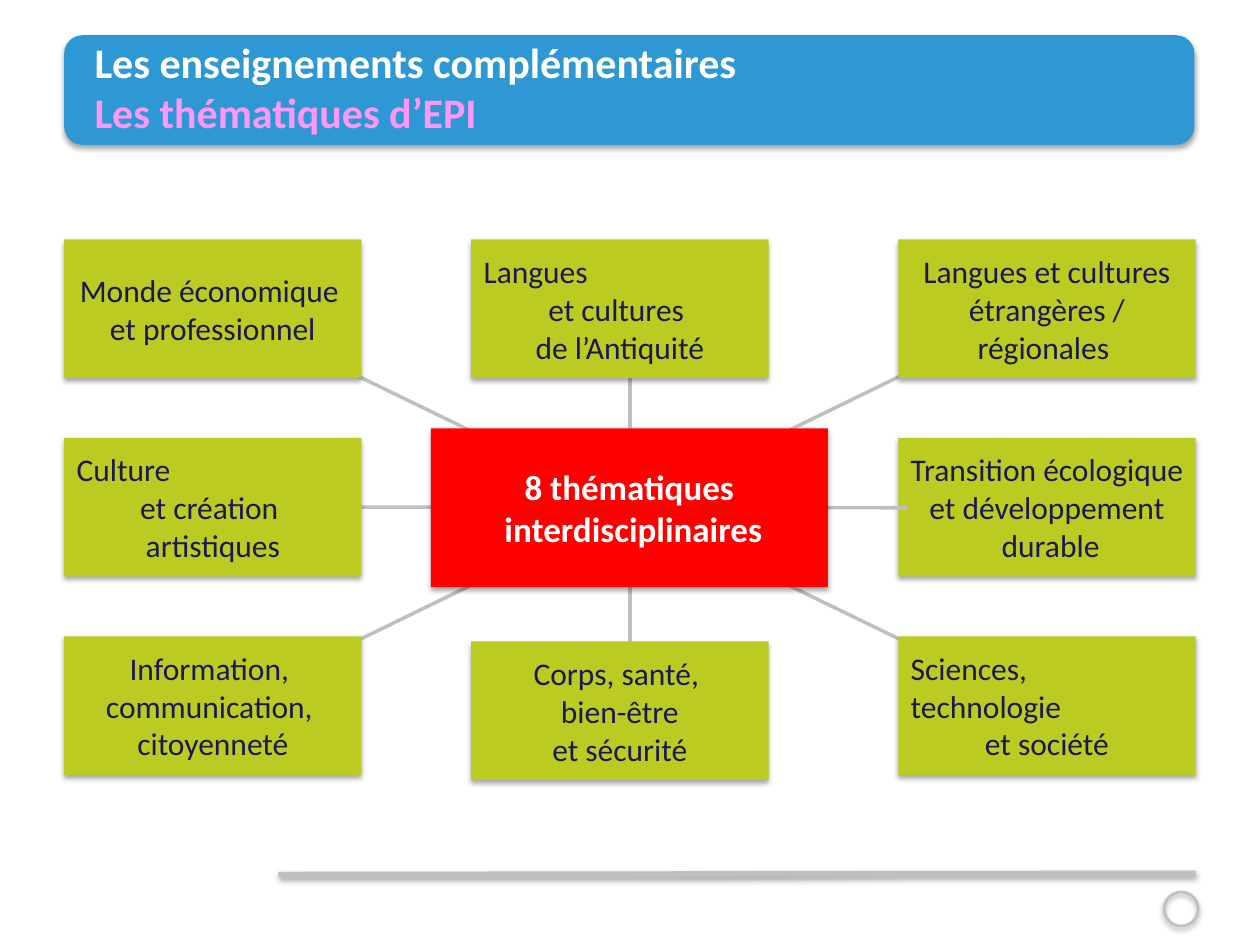
"""Builds the slide showing the eight EPI themes around a central box."""
from lxml.etree import SubElement
from pptx import Presentation
from pptx.dml.color import RGBColor
from pptx.enum.shapes import MSO_CONNECTOR as Connector, MSO_SHAPE as Shape
from pptx.enum.text import MSO_ANCHOR as Anchor, MSO_AUTO_SIZE as AutoSize, PP_ALIGN as Align
from pptx.oxml.ns import qn
from pptx.util import Inches, Pt

THEME = {
    "font": "Calibri",
    "banner": "2E98D5", "accent": "FF97F6", "white": "FFFFFF", "line": "BFBFBF",
    "box": "BCCB21", "ink": "1C1850", "hub": "FF0000",
    "title_size": 24, "hub_size": 20, "box_size": 18,
}
TITLE = ["Les enseignements complémentaires", "Les thématiques d’EPI"]
HUB = ["8 thématiques", " interdisciplinaires"]
MIDDLE_THEMES = [
    {"cell": (1, 2), "lines": ["Corps, santé, ", "bien-être", "et sécurité"], "drop": 0.04},
    {"cell": (1, 0), "lines": ["Langues", "et cultures ", "de l’Antiquité"], "first": Align.LEFT},
]
RIGHT_THEMES = [
    {"cell": (2, 2), "lines": ["Sciences, technologie", "et société"], "first": Align.LEFT},
    {"cell": (2, 1), "lines": ["Transition écologique et développement", " durable"], "inset": 0.04},
    {"cell": (2, 0), "lines": ["Langues et cultures", "étrangères / régionales "]},
]
LEFT_THEMES = [
    {"cell": (0, 2), "lines": ["Information, ", "communication, ", "citoyenneté"]},
    {"cell": (0, 1), "lines": ["Culture", "et création ", "artistiques"], "first": Align.LEFT},
    {"cell": (0, 0), "lines": ["Monde économique ", "et professionnel"]},
]
SPOKES = [
    ((2.79, 2.96), (7.36, 5.18)),
    ((7.36, 2.88), (2.64, 5.18)),
    ((5, 2.38), (5, 5.61)),
]
CROSSBAR = ((7.2, 4.03), (2.85, 4.03))
FOOTER_RULE = ((2.21, 6.94), (9.49, 6.93))
COLUMNS = (0.51, 3.74, 7.13)
TOP, PITCH = 1.9, 1.575
BOX_W, BOX_H = 2.36, 1.1


def color(name):
    return RGBColor.from_string(THEME[name])


def add_shadow(sp, alpha=35, distance=1.8):
    effects = SubElement(sp._element.spPr, qn("a:effectLst"))
    outer = SubElement(effects, qn("a:outerShdw"), blurRad=str(Pt(3.1)),
                       dist=str(Pt(distance)), dir="5400000", rotWithShape="0")
    black = SubElement(outer, qn("a:srgbClr"), val="000000")
    SubElement(black, qn("a:alpha"), val=str(alpha * 1000))


def write(sp, lines, size, colors, bold=False, align=Align.CENTER, first=None, inset=(0.1, 0.05)):
    tf = sp.text_frame
    tf.word_wrap = True
    tf.auto_size = AutoSize.NONE
    tf.vertical_anchor = Anchor.MIDDLE
    tf.margin_left = tf.margin_right = Inches(inset[0])
    tf.margin_top = tf.margin_bottom = Inches(inset[1])
    for i, line in enumerate(lines):
        p = tf.paragraphs[0] if i == 0 else tf.add_paragraph()
        p.alignment = first if i == 0 and first is not None else align
        p.space_before = Pt(0)
        r = p.add_run()
        r.text = line
        r.font.name = THEME["font"]
        r.font.size = Pt(THEME[size])
        r.font.bold = bold
        r.font.color.rgb = color(colors[i % len(colors)])


def add_block(s, kind, at, fill=None, line=None):
    sp = s.shapes.add_shape(kind, *map(Inches, at))
    if fill:
        sp.fill.solid()
        sp.fill.fore_color.rgb = color(fill)
    else:
        sp.fill.background()
    if line:
        sp.line.color.rgb = color(line)
        sp.line.width = Pt(1.5)
    else:
        sp.line.fill.background()
    add_shadow(sp)
    return sp


def add_line(s, ends, width=2, shadow=False):
    start, end = ends
    line = s.shapes.add_connector(Connector.STRAIGHT, *map(Inches, start + end))
    line.line.color.rgb = color("line")
    line.line.width = Pt(width)
    if shadow:
        add_shadow(line, alpha=38, distance=1.6)
    else:
        SubElement(line._element.spPr, qn("a:effectLst"))
    return line


def add_theme(s, cell, lines, first=None, inset=0.1, drop=0):
    column, row = cell
    at = (COLUMNS[column], TOP + row * PITCH + drop, BOX_W, BOX_H)
    sp = add_block(s, Shape.RECTANGLE, at, fill="box")
    write(sp, lines, "box_size", ["ink"], first=first, inset=(inset, 0.05))
    return sp


def add_header(s):
    add_block(s, Shape.ROUNDED_RECTANGLE, (0.51, 0.28, 8.97, 0.87), fill="banner")
    add_line(s, FOOTER_RULE, width=3, shadow=True)
    add_block(s, Shape.OVAL, (9.24, 7.08, 0.27, 0.27), line="line")
    title = s.shapes.title
    title.left, title.top, title.width, title.height = map(Inches, (0.75, 0.18, 8.74, 1.02))
    write(title, TITLE, "title_size", ["white", "accent"], bold=True, align=Align.LEFT, inset=(0, 0))
    s.shapes._spTree.append(title._element)


def main():
    prs = Presentation()
    prs.slide_width, prs.slide_height = Inches(10), Inches(7.5)
    s = prs.slides.add_slide(prs.slide_layouts[5])
    add_header(s)
    for ends in SPOKES:
        add_line(s, ends)
    for theme in MIDDLE_THEMES + RIGHT_THEMES:
        add_theme(s, **theme)
    crossbar = add_line(s, CROSSBAR)
    left = {theme["cell"]: add_theme(s, **theme) for theme in LEFT_THEMES}
    crossbar.end_connect(left[0, 1], 3)
    hub = add_block(s, Shape.RECTANGLE, (3.42, 3.4, 3.15, 1.26), fill="hub")
    write(hub, HUB, "hub_size", ["white"], bold=True)
    prs.save("out.pptx")


if __name__ == "__main__":
    main()
